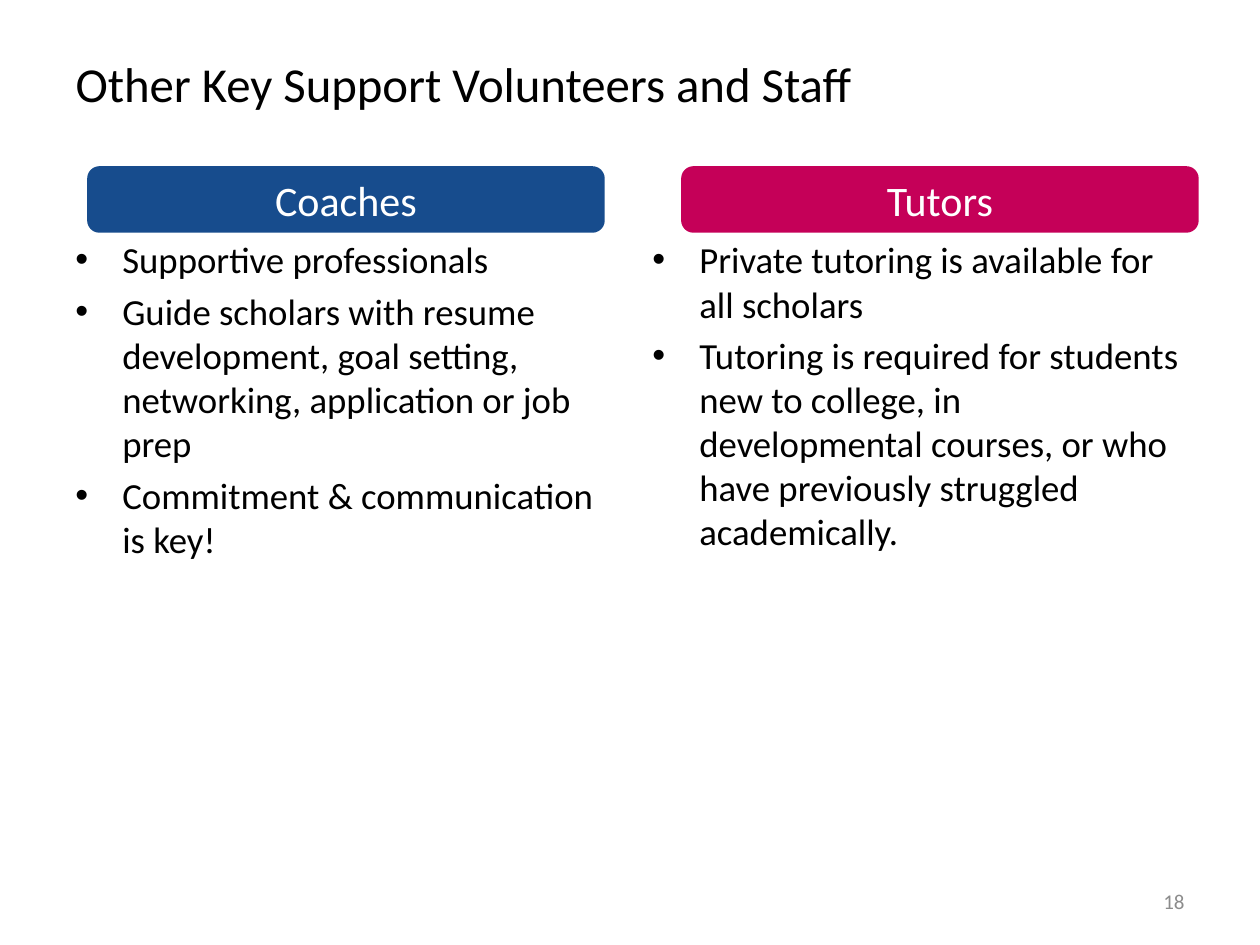
import dataclasses

import pptx
import pptx.dml.color
import pptx.enum.shapes
import pptx.enum.text
import pptx.util
from lxml import etree

ALIGN = pptx.enum.text.PP_ALIGN
ANCHOR = pptx.enum.text.MSO_ANCHOR
EMU_PER_PX = 914400 / 126


@dataclasses.dataclass(frozen=True)
class Theme:
    font: str = "Calibri"
    ink: str = "000000"
    muted: str = "8C8C8C"
    white: str = "FFFFFF"
    blue: str = "174C8D"
    pink: str = "C50058"
    title_pt: float = 27.9
    heading_pt: int = 24
    body_pt: int = 21
    number_pt: int = 12


def px(n):
    return pptx.util.Emu(round(n * EMU_PER_PX))


def rgb(value):
    return pptx.dml.color.RGBColor.from_string(value)


class Deck:
    def __init__(self, prs, theme):
        self.theme = theme
        self.s = prs.slides.add_slide(prs.slide_layouts[5])

    def frame(self, sp, anchor):
        tf = sp.text_frame
        tf.word_wrap = True
        tf.auto_size = pptx.enum.text.MSO_AUTO_SIZE.NONE
        tf.vertical_anchor = anchor
        return tf

    def run(self, p, text, size, color, align=ALIGN.LEFT):
        p.alignment = align
        r = p.add_run()
        r.text = text
        r.font.name = self.theme.font
        r.font.size = pptx.util.Pt(size)
        r.font.color.rgb = rgb(color)

    def title(self, text, x, y, w, h):
        sp = self.s.shapes.title
        sp.left, sp.top, sp.width, sp.height = map(px, (x, y, w, h))
        p = self.frame(sp, ANCHOR.MIDDLE).paragraphs[0]
        p.line_spacing = 0.8
        self.run(p, text, self.theme.title_pt, self.theme.ink)

    def banner(self, text, color, x, y, w, h):
        sp = self.s.shapes.add_shape(
            pptx.enum.shapes.MSO_SHAPE.ROUNDED_RECTANGLE, *map(px, (x, y, w, h)))
        sp.shadow.inherit = False
        sp.fill.solid()
        sp.fill.fore_color.rgb = rgb(color)
        sp.line.color.rgb = rgb(color)
        sp.line.width = pptx.util.Pt(2)
        p = self.frame(sp, ANCHOR.MIDDLE).paragraphs[0]
        self.run(p, text, self.theme.heading_pt, self.theme.white, ALIGN.CENTER)

    def bullets(self, items, x, y, w, h, indent=47):
        sp = self.s.shapes.add_textbox(*map(px, (x, y, w, h)))
        tf = self.frame(sp, ANCHOR.TOP)
        for i, text in enumerate(items):
            p = tf.paragraphs[0] if i == 0 else tf.add_paragraph()
            p.space_before = pptx.util.Pt(0.2 * self.theme.body_pt)
            pPr = p._p.get_or_add_pPr()
            pPr.set("marL", str(px(indent)))
            pPr.set("indent", str(-px(indent)))
            ns = pPr.nsmap["a"]
            etree.SubElement(pPr, f"{{{ns}}}buFont", typeface="Arial")
            etree.SubElement(pPr, f"{{{ns}}}buChar", char="•")
            self.run(p, text, self.theme.body_pt, self.theme.ink)

    def page_number(self, text, x, y, w, h):
        sp = self.s.shapes.add_textbox(*map(px, (x, y, w, h)))
        p = self.frame(sp, ANCHOR.MIDDLE).paragraphs[0]
        self.run(p, text, self.theme.number_pt, self.theme.muted, ALIGN.RIGHT)


def main():
    prs = pptx.Presentation()
    prs.slide_width, prs.slide_height = px(1260), px(945)
    theme = Theme()
    deck = Deck(prs, theme)

    # Title
    deck.title("Other Key Support Volunteers and Staff", 63, 60, 1134, 56)

    # Two columns: banner over its bullets
    columns = [
        ("Coaches", theme.blue, 89, 63, 714, [
            "Supportive professionals",
            "Guide scholars with resume development, goal setting, "
            "networking, application or job prep",
            "Commitment & communication is key!"]),
        ("Tutors", theme.pink, 683, 640, 346, [
            "Private tutoring is available for all scholars",
            "Tutoring is required for students new to college, in developmental "
            "courses, or who have previously struggled academically."]),
    ]
    for heading, color, banner_x, text_x, text_h, items in columns:
        deck.bullets(items, text_x, 231, 557, text_h)
        deck.banner(heading, color, banner_x, 168, 514, 63)

    # Page number
    deck.page_number("18", 903, 876, 294, 50)

    prs.save("out.pptx")


if __name__ == "__main__":
    main()
